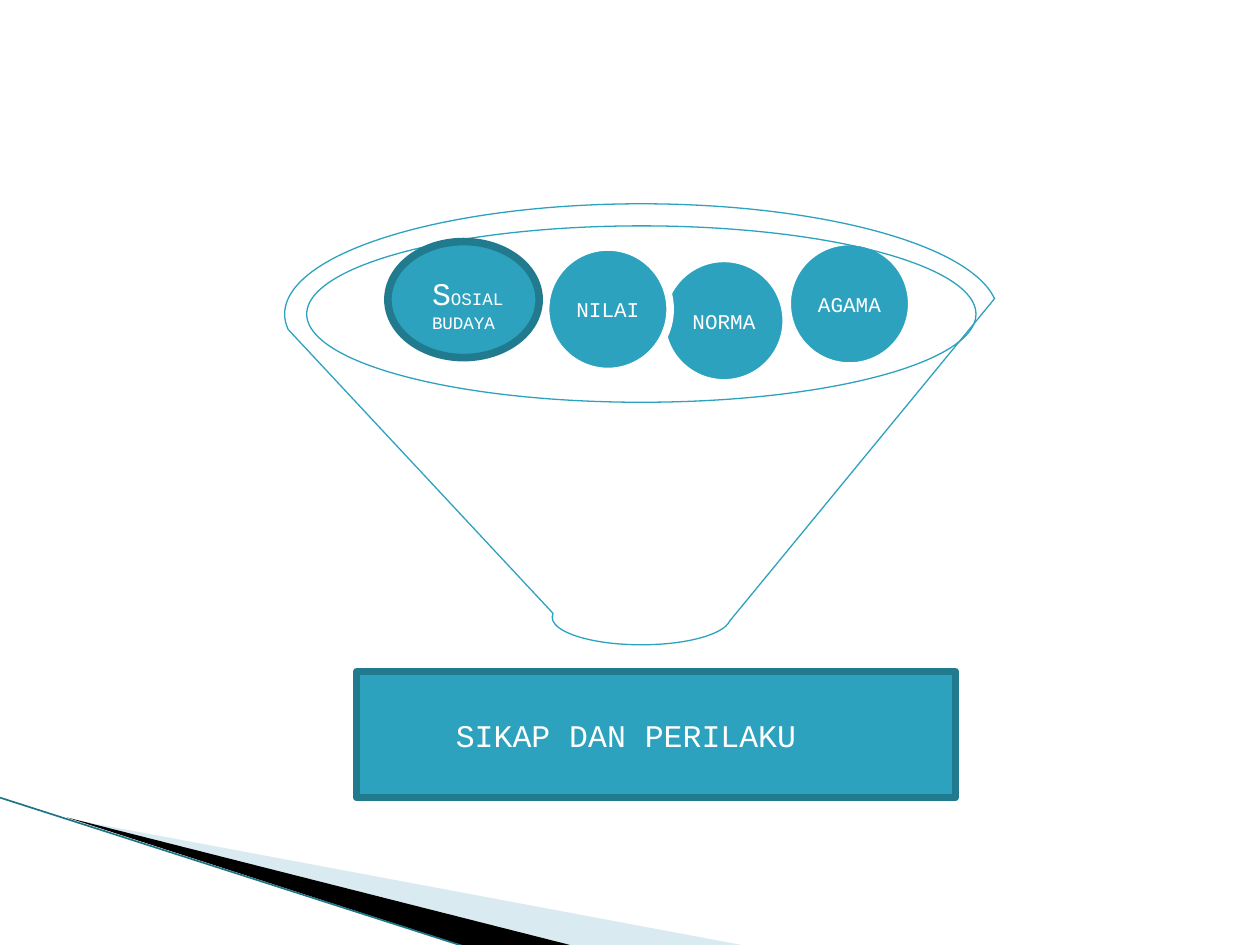
from lxml import etree
from pptx import Presentation
from pptx.dml.color import RGBColor
from pptx.enum import shapes as kinds, text as texts
from pptx.oxml import ns
from pptx.util import Cm, Pt

COLORS = {
    "teal": "2DA2BF",
    "edge": "227A8F",
    "white": "FFFFFF",
    "pale": "A0CBDC",
    "black": "000000",
    "stripe": "1F7488",
}
FONT = "Courier New"


def color(name):
    """Return the named colour."""
    return RGBColor.from_string(COLORS[name])


def paint(shape, fill=None, line=None, width=4.33):
    """Set the fill and outline of a shape and drop its shadow."""
    shape.shadow.inherit = False
    if fill:
        shape.fill.solid()
        shape.fill.fore_color.rgb = color(fill)
    else:
        shape.fill.background()
    if line:
        shape.line.color.rgb = color(line)
        shape.line.width = Pt(width)
    else:
        shape.line.fill.background()
    return shape


def add_preset(slide, kind, box, **style):
    """Add a painted preset shape in a box given in centimetres."""
    return paint(slide.shapes.add_shape(kind, *map(Cm, box)), **style)


def write(shape, runs, align=texts.PP_ALIGN.LEFT, anchor=texts.MSO_ANCHOR.TOP,
          inset=0.25):
    """Write (wording, size) runs into a shape as one paragraph."""
    frame = shape.text_frame
    frame.word_wrap = True
    frame.vertical_anchor = anchor
    frame.margin_left = frame.margin_right = Cm(inset)
    frame.margin_top = frame.margin_bottom = Cm(inset)
    paragraph = frame.paragraphs[0]
    paragraph.alignment = align
    for wording, size in runs:
        run = paragraph.add_run()
        run.text = wording
        run.font.name = FONT
        run.font.size = Pt(size)
        run.font.color.rgb = color("white")


def add_wedge(slide, points, fill, opacity=100):
    """Add a filled polygon through points given in centimetres."""
    start, *rest = [(Cm(x), Cm(y)) for x, y in points]
    builder = slide.shapes.build_freeform(*start)
    builder.add_line_segments(rest, close=True)
    wedge = paint(builder.convert_to_shape(), fill=fill)
    if opacity < 100:
        tint = wedge._element.spPr.find(".//" + ns.qn("a:srgbClr"))
        etree.SubElement(tint, ns.qn("a:alpha"), val=str(opacity * 1000))


def add_corner(slide, left, top):
    """Draw the swoosh in the lower left corner."""
    def place(*points):
        return [(left + x, top + y) for x, y in points]

    add_wedge(slide, place((1.4, 0.43), (15.11, 3), (11.58, 3)), "pale", 40)
    add_wedge(slide, place((1.35, 0.4), (11.61, 3), (9.45, 3.02)), "black")
    (x1, y1), (x2, y2) = place((0, 0), (9.42, 3.02))
    stripe = slide.shapes.add_connector(
        kinds.MSO_CONNECTOR.STRAIGHT, Cm(x1), Cm(y1), Cm(x2), Cm(y2))
    stripe.line.color.rgb = color("stripe")
    stripe.line.width = Pt(0.95)
    etree.SubElement(stripe._element.spPr, ns.qn("a:effectLst"))


def add_funnel(slide, left, top, width, height):
    """Draw the funnel with the factors that go into it."""
    size = 2.51
    factors = [("NORMA", 7.6, 1.1), ("NILAI", 5.26, 0.87), ("AGAMA", 10.13, 0.76)]
    for factor, x, y in factors:
        ball = add_preset(slide, kinds.MSO_SHAPE.OVAL,
                          (left + x, top + y, size, size),
                          fill="teal", line="white")
        write(ball, [(factor, 12)], align=texts.PP_ALIGN.CENTER,
              anchor=texts.MSO_ANCHOR.MIDDLE, inset=0.05)
    add_preset(slide, kinds.MSO_SHAPE.FUNNEL, (left, top, width, height),
               line="teal", width=0.75)
    add_preset(slide, kinds.MSO_SHAPE.OVAL, (left + 2.08, top + 0.76, 3.05, 2.34),
               fill="teal", line="edge")
    culture = slide.shapes.add_textbox(
        Cm(left + 2.72), Cm(top + 1.17), Cm(2.36), Cm(1.45))
    write(culture, [("S", 18), ("OSIAL BUDAYA", 10)])


def add_result(slide, left, top, width, height):
    """Draw the bar naming what comes out of the funnel."""
    add_preset(slide, kinds.MSO_SHAPE.RECTANGLE, (left, top, width, height),
               fill="teal", line="edge")
    result = slide.shapes.add_textbox(
        Cm(left + 1.75), Cm(top + 0.64), Cm(9.47), Cm(2))
    write(result, [("SIKAP DAN PERILAKU", 18)])


def main():
    """Build and save the slide."""
    deck = Presentation()
    deck.slide_width, deck.slide_height = Cm(25.4), Cm(19.05)
    slide = deck.slides.add_slide(deck.slide_layouts[6])
    add_corner(slide, 0, 16.08)
    add_funnel(slide, 5.74, 4.11, 14.38, 8.89)
    add_result(slide, 7.19, 13.54, 12.07, 2.54)
    deck.save("out.pptx")


if __name__ == "__main__":
    main()
